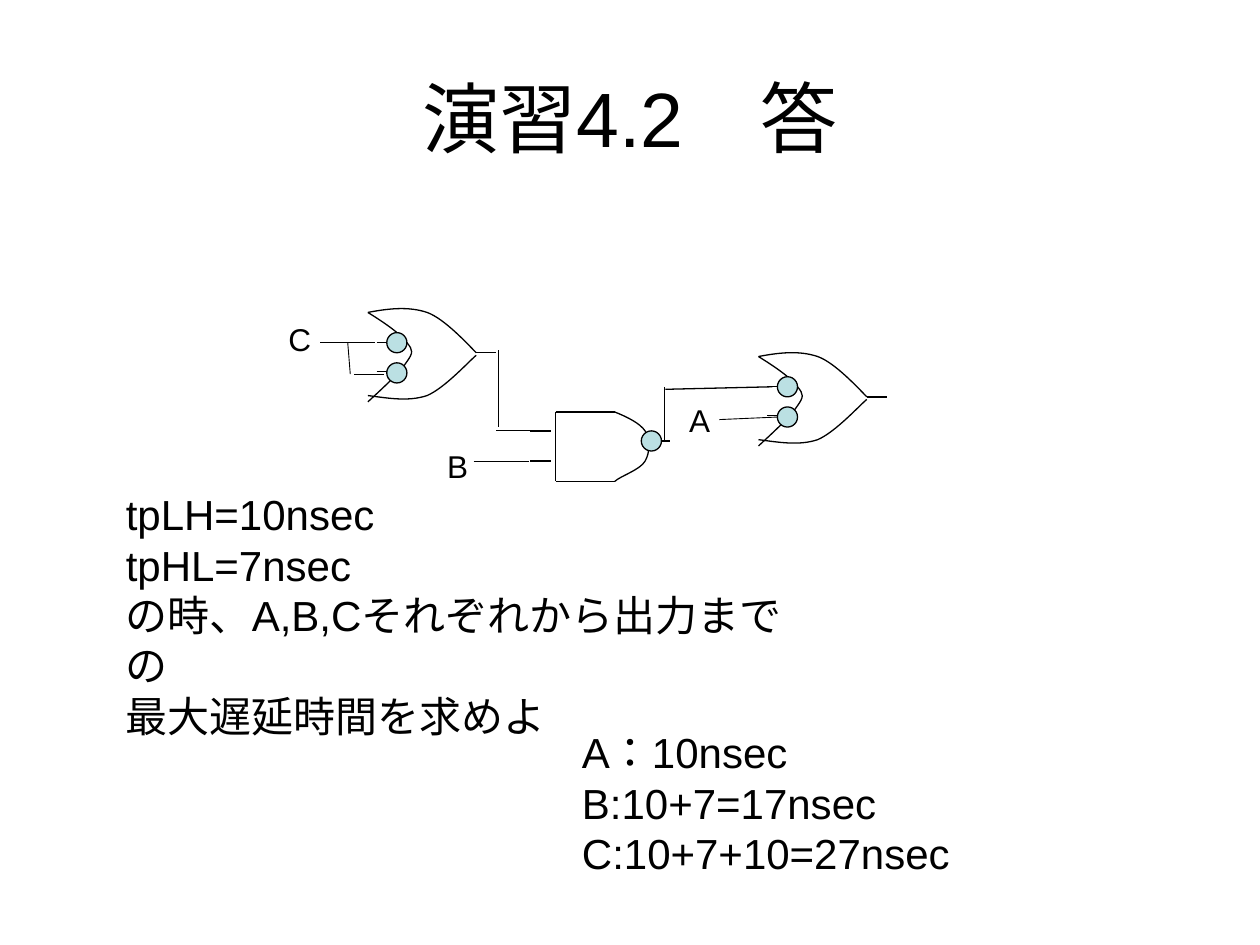
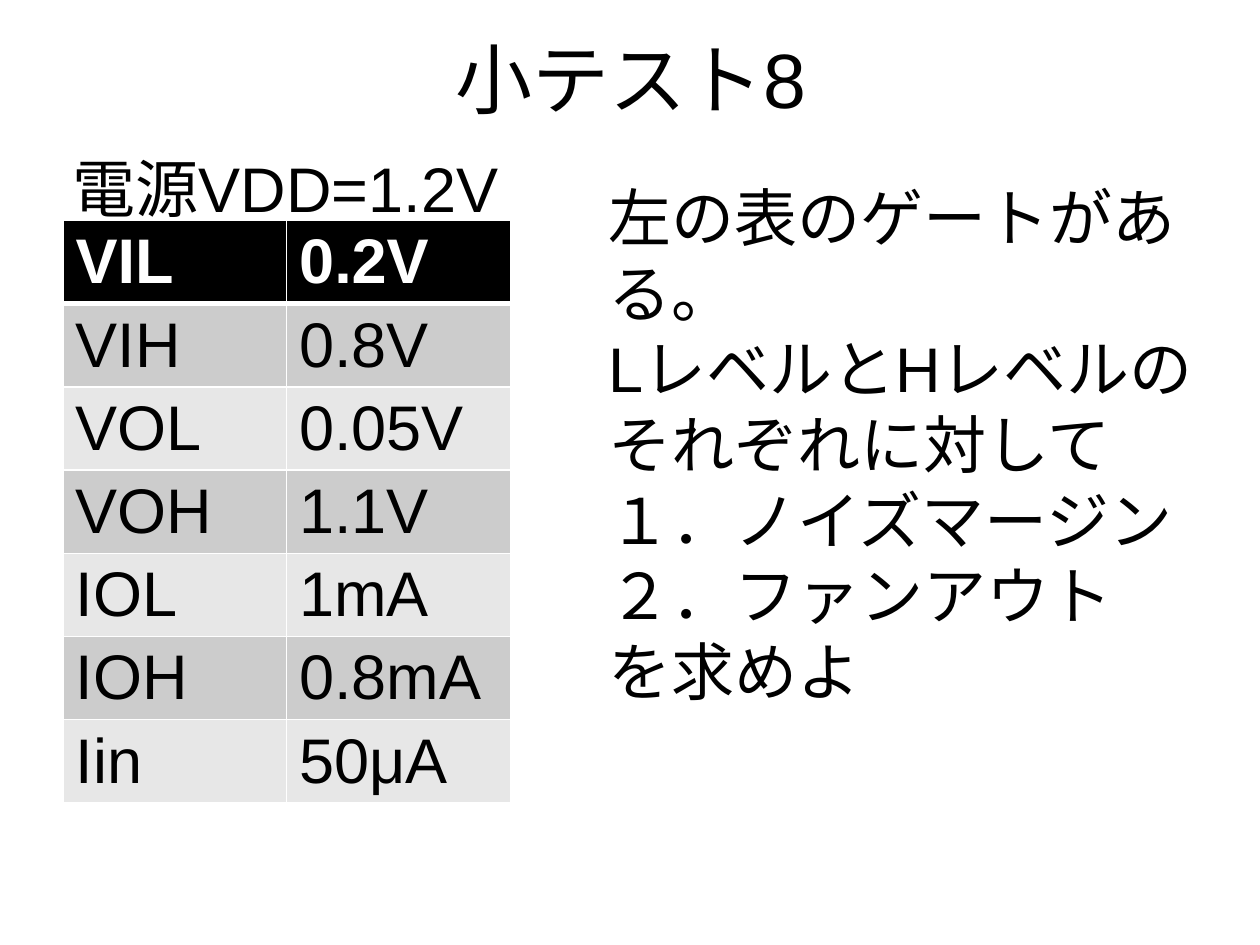
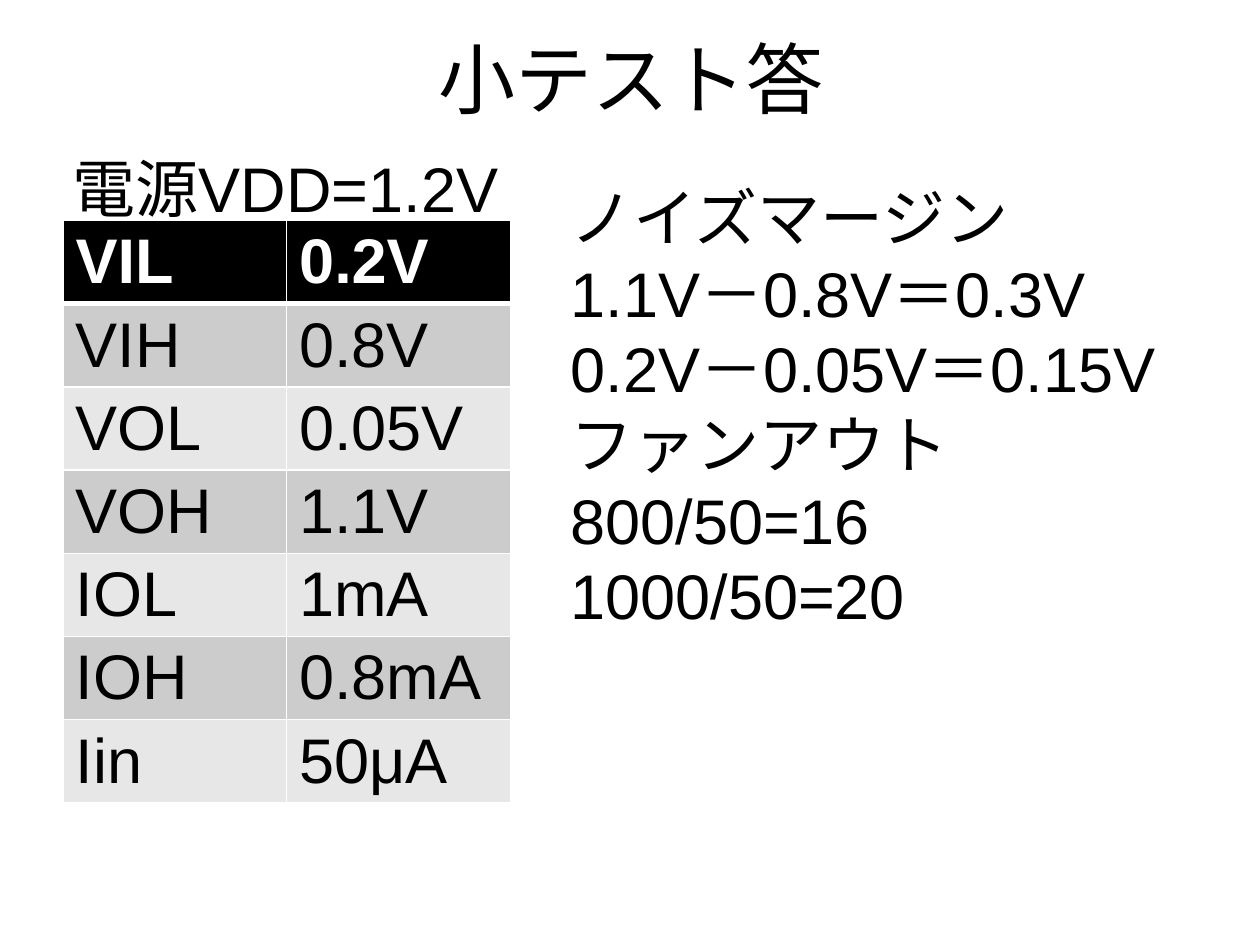
import lxml.etree
import pptx
import pptx.dml.color
import pptx.enum.lang
import pptx.enum.shapes
import pptx.enum.text
import pptx.oxml
import pptx.oxml.ns
import pptx.util

Inches = pptx.util.Inches
Pt = pptx.util.Pt
tint = pptx.dml.color.RGBColor.from_string
qn = pptx.oxml.ns.qn

FONT = "Arial"
BLACK, WHITE, BLUE = "000000", "FFFFFF", "BBE0E3"
BANDS = ["E7E7E7", "CCCCCC"]
TITLE, LARGE, BODY, LABEL = 44, 36, 24, 18


def write(frame, text, size, ink=BLACK, bold=False):
    frame.text = text
    frame.word_wrap = True
    for para in frame.paragraphs:
        para._p.get_or_add_pPr().set("hangingPunct", "0")
        for run in para.runs:
            run.font.name = FONT
            run.font.size = Pt(size)
            run.font.bold = bold
            run.font.color.rgb = tint(ink)
            run.font.language_id = pptx.enum.lang.MSO_LANGUAGE_ID.JAPANESE


def link(slide, ends, width):
    kind = pptx.enum.shapes.MSO_CONNECTOR.STRAIGHT
    wire = slide.shapes.add_connector(kind, *[Inches(end) for end in ends])
    wire.line.color.rgb = tint(BLACK)
    wire.line.width = Pt(width)
    lxml.etree.SubElement(wire._element.spPr, qn("a:effectLst"))


deck = pptx.Presentation()
deck.slide_width = Inches(10)
deck.slide_height = Inches(7.5)

# Text of each slide: left, top, width, height, size, words
supply = (0.48, 1.14, 5.59, 0.71, LARGE, "電源VDD=1.2V")
pages = [
    [
        (0.5, 0.3, 9, 1.25, TITLE, "演習4.2　答"),
        (5.37, 3.13, 0.35, 0.4, LABEL, "A"),
        (3.45, 3.5, 0.35, 0.4, LABEL, "B"),
        (2.19, 2.49, 0.35, 0.4, LABEL, "C"),
        (0.9, 3.83, 5.51, 1.72, BODY,
         "tpLH=10nsec\ntpHL=7nsec\n"
         "の時、A,B,Cそれぞれから出力までの\n最大遅延時間を求めよ"),
        (4.52, 5.72, 3.15, 1.31, BODY,
         "A：10nsec\nB:10+7=17nsec\nC:10+7+10=27nsec"),
    ],
    [
        (0.51, -0.01, 9, 1.25, TITLE, "小テスト8"),
        (4.73, 1.37, 5.27, 4.34, LARGE,
         "左の表のゲートがある。\nLレベルとHレベルの\nそれぞれに対して\n"
         "１．ノイズマージン\n２．ファンアウト\nを求めよ"),
        supply,
    ],
    [
        (0.51, -0.01, 9, 1.25, TITLE, "小テスト答"),
        supply,
        (4.43, 1.37, 5.59, 3.74, LARGE,
         "ノイズマージン\n1.1V－0.8V＝0.3V\n0.2V－0.05V＝0.15V\n"
         "ファンアウト\n800/50=16\n1000/50=20"),
    ],
]
slides = [deck.slides.add_slide(deck.slide_layouts[6]) for page in pages]

# Gates: each curve is a start and then three points per Bezier piece
nand = {
    "spot": (4.41, 3.27),
    "curves": [[(0.47, 0), (0.57, 0.04), (0.67, 0.09), (0.71, 0.15),
                (0.75, 0.22), (0.75, 0.32), (0.71, 0.39),
                (0.67, 0.46), (0.51, 0.51), (0.47, 0.55)]],
    "lines": [(0, 0, 0.47, 0), (0, 0.55, 0.47, 0.55), (0, 0, 0, 0.55),
              (-0.2, 0.15, -0.04, 0.15), (-0.2, 0.39, -0.04, 0.39),
              (0.75, 0.23, 0.91, 0.23)],
    "dots": [(0.68, 0.15)],
}
nor = {
    "curves": [
        [(0, 0), (0.16, -0.03), (0.32, -0.05), (0.47, 0),
         (0.61, 0.05), (0.8, 0.26), (0.86, 0.32)],
        [(0, 0.66), (0.16, 0.68), (0.32, 0.71), (0.47, 0.66),
         (0.61, 0.6), (0.8, 0.39), (0.86, 0.34)],
        [(0, 0), (0.13, 0.08), (0.26, 0.17), (0.31, 0.24),
         (0.36, 0.3), (0.36, 0.32), (0.31, 0.39),
         (0.26, 0.47), (0.13, 0.59), (0, 0.71)],
    ],
    "lines": [(0.86, 0.32, 1.02, 0.32), (0.07, 0.24, 0.23, 0.24),
              (0.07, 0.47, 0.23, 0.47)],
    "dots": [(0.15, 0.16), (0.15, 0.4)],
}
board = slides[0]
for gate in [nand, {**nor, "spot": (2.92, 2.48)}, {**nor, "spot": (6.02, 2.83)}]:
    left, top = gate["spot"]
    for curve in gate["curves"]:
        spots = [(Inches(left + x), Inches(top + y)) for x, y in curve]
        pen = board.shapes.build_freeform(*spots[0])
        pen.add_line_segments(spots[1:], close=False)
        arc = pen.convert_to_shape()
        arc.shadow.inherit = False
        arc.fill.background()
        arc.line.color.rgb = tint(BLACK)
        arc.line.width = Pt(0.75)
        # Turn every three straight steps into one Bezier piece
        steps = list(arc._element.iter(qn("a:lnTo")))
        for i in range(0, len(steps), 3):
            bend = lxml.etree.SubElement(steps[i].getparent(), qn("a:cubicBezTo"))
            for step in steps[i:i + 3]:
                bend.append(step[0])
                step.getparent().remove(step)
    for x1, y1, x2, y2 in gate["lines"]:
        link(board, (left + x1, top + y1, left + x2, top + y2), 0.75)
    for x, y in gate["dots"]:
        dot = board.shapes.add_shape(
            pptx.enum.shapes.MSO_SHAPE.OVAL,
            Inches(left + x), Inches(top + y), Inches(0.16), Inches(0.16))
        dot.shadow.inherit = False
        dot.fill.solid()
        dot.fill.fore_color.rgb = tint(BLUE)
        dot.line.color.rgb = tint(BLACK)
        dot.line.width = Pt(0.75)

# Wires between the gates
link(board, (5.28, 3.09, 6.13, 3.07), 0.75)
for wire in [
    (3.94, 3.42, 4.21, 3.42), (5.27, 3.07, 5.27, 3.5),
    (5.71, 3.33, 6.17, 3.31), (3.76, 3.66, 4.2, 3.66),
    (3.96, 2.78, 3.96, 3.39), (2.54, 2.72, 2.98, 2.72),
    (2.76, 2.72, 2.78, 2.97), (2.81, 2.97, 3.05, 2.97),
]:
    link(board, wire, 0.5)

# Table of gate values on both quiz slides
rows = [("VIL", "0.2V"), ("VIH", "0.8V"), ("VOL", "0.05V"), ("VOH", "1.1V"),
        ("IOL", "1mA"), ("IOH", "0.8mA"), ("Iin", "50μA")]
for slide in slides[1:]:
    grid = slide.shapes.add_table(
        len(rows), 2, Inches(0.5), Inches(1.75), Inches(3.55), Inches(0.66 * len(rows))).table
    for r, row in enumerate(rows):
        for c, word in enumerate(row):
            cell = grid.cell(r, c)
            head = r == 0
            write(cell.text_frame, word, LARGE, WHITE if head else BLACK, head)
            props = cell._tc.get_or_add_tcPr()
            for side in "LRTB":
                thick = (head and side == "B") or (r == 1 and side == "T")
                edge = lxml.etree.SubElement(
                    props, qn("a:ln" + side), w=str(Pt(3 if thick else 1)))
                fill = lxml.etree.SubElement(edge, qn("a:solidFill"))
                lxml.etree.SubElement(fill, qn("a:srgbClr"), val=WHITE)
            cell.fill.solid()
            cell.fill.fore_color.rgb = tint(BLACK if head else BANDS[r % 2])

# Titles, labels and body text
for slide, page in zip(slides, pages):
    for *box, size, words in page:
        frame = slide.shapes.add_textbox(*[Inches(side) for side in box]).text_frame
        write(frame, words, size)
        if size == TITLE:
            frame.vertical_anchor = pptx.enum.text.MSO_ANCHOR.MIDDLE
            frame.paragraphs[0].alignment = pptx.enum.text.PP_ALIGN.CENTER

deck.save("out.pptx")
